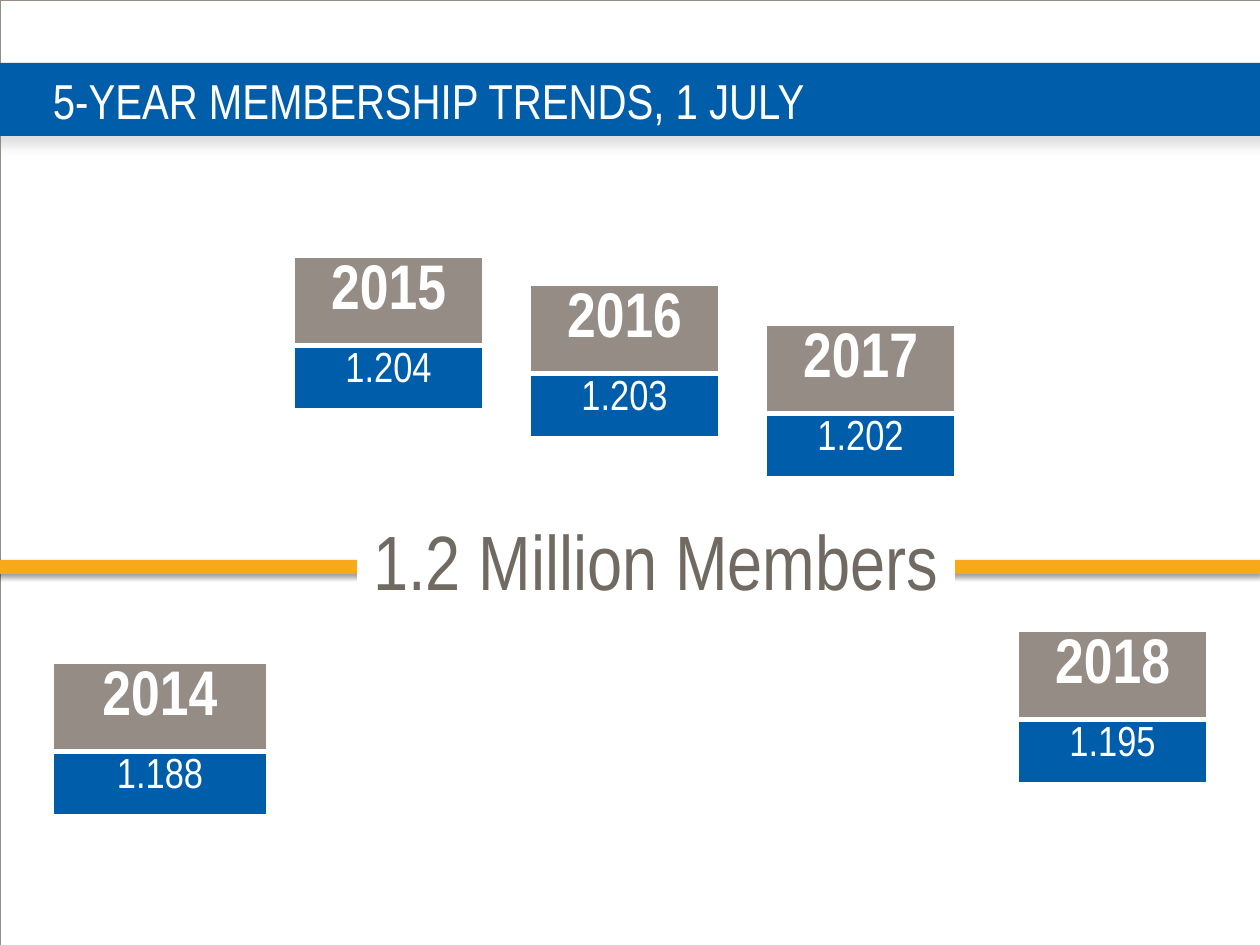
from lxml import etree
from pptx import Presentation
from pptx.dml.color import RGBColor
from pptx.enum.shapes import MSO_CONNECTOR, MSO_SHAPE
from pptx.enum.text import MSO_ANCHOR, PP_ALIGN
from pptx.oxml.ns import qn
from pptx.util import Emu, Pt

TITLE = "5-YEAR MEMBERSHIP TRENDS, 1 JULY"
HEADLINE = "1.2 Million Members"
YEARS = [
    ("2014", "1.188", 53, 663, 214),
    ("2015", "1.204", 294, 257, 189),
    ("2016", "1.203", 530, 285, 189),
    ("2017", "1.202", 766, 325, 189),
    ("2018", "1.195", 1018, 631, 189),
]
YEAR_HEIGHT, VALUE_HEIGHT = 87, 63

FONT = "Arial Narrow"
WHITE = RGBColor(0xFF, 0xFF, 0xFF)
BLUE = RGBColor(0x00, 0x5D, 0xAA)
GOLD = RGBColor(0xF7, 0xA8, 0x1B)
TAUPE = RGBColor(0x95, 0x8D, 0x85)
DARK_TAUPE = RGBColor(0x71, 0x6A, 0x62)
SHADOW_GRAY = RGBColor(0x80, 0x80, 0x80)
BLACK = RGBColor(0x00, 0x00, 0x00)
LEFT, CENTER = PP_ALIGN.LEFT, PP_ALIGN.CENTER
TOP, MIDDLE = MSO_ANCHOR.TOP, MSO_ANCHOR.MIDDLE
RECTANGLE = MSO_SHAPE.RECTANGLE
STRAIGHT = MSO_CONNECTOR.STRAIGHT
EMU_PER_PX = 914400 / 126


def px(*lengths):
    return [Emu(round(length * EMU_PER_PX)) for length in lengths]


def write_text(frame, text, size, color, bold=False, align=LEFT, anchor=TOP):
    frame.word_wrap = True
    frame.vertical_anchor = anchor
    paragraph = frame.paragraphs[0]
    paragraph.alignment = align
    run = paragraph.add_run()
    run.text = text
    run.font.name = FONT
    run.font.size = Pt(size)
    run.font.bold = bold
    run.font.color.rgb = color


def add_rectangle(slide, box, fill=None, line=None):
    shape = slide.shapes.add_shape(RECTANGLE, *px(*box))
    shape.shadow.inherit = False
    if fill is None:
        shape.fill.background()
    else:
        shape.fill.solid()
        shape.fill.fore_color.rgb = fill
    if line is None:
        shape.line.fill.background()
    else:
        shape.line.color.rgb = line
        shape.line.width = Pt(0.13)
    return shape


def add_shadow(shape, color, opacity, blur, distance):
    properties = shape._element.spPr
    effects = properties.find(qn("a:effectLst"))
    if effects is None:
        effects = etree.SubElement(properties, qn("a:effectLst"))
    shadow = etree.SubElement(
        effects, qn("a:outerShdw"), blurRad=str(Pt(blur)), dist=str(Pt(distance)),
        dir="5400000", algn="t", rotWithShape="0")
    shade = etree.SubElement(shadow, qn("a:srgbClr"), val=str(color))
    etree.SubElement(shade, qn("a:alpha"), val=str(opacity * 1000))


def set_borders(cell, bottom):
    properties = cell._tc.get_or_add_tcPr()
    sides = [("a:lnL", 1), ("a:lnR", 1), ("a:lnT", 1), ("a:lnB", bottom)]
    for index, (tag, width) in enumerate(sides):
        line = etree.Element(qn(tag), w=str(Pt(width)))
        fill = etree.SubElement(line, qn("a:solidFill"))
        etree.SubElement(fill, qn("a:srgbClr"), val=str(WHITE))
        properties.insert(index, line)


def add_year_table(slide, year, value, left, top, width):
    heights = px(YEAR_HEIGHT, VALUE_HEIGHT)
    box = px(left, top, width, YEAR_HEIGHT + VALUE_HEIGHT)
    table = slide.shapes.add_table(2, 1, *box).table
    rows = [(year, 36, True, TAUPE, 3), (value, 24, False, BLUE, 1)]
    for index, (text, size, bold, fill, bottom) in enumerate(rows):
        table.rows[index].height = heights[index]
        cell = table.cell(index, 0)
        cell.fill.solid()
        cell.fill.fore_color.rgb = fill
        set_borders(cell, bottom)
        write_text(cell.text_frame, text, size, WHITE, bold=bold, align=CENTER)


def main():
    presentation = Presentation()
    presentation.slide_width, presentation.slide_height = px(1260, 945)
    slide = presentation.slides.add_slide(presentation.slide_layouts[6])

    add_rectangle(slide, (0, 0, 1260, 945), line=TAUPE)
    banner = add_rectangle(slide, (-10, 63, 1281, 73), fill=BLUE)
    add_shadow(banner, SHADOW_GRAY, 25, 7, 4.8)

    title = slide.shapes.add_textbox(*px(53, 63, 1207, 73)).text_frame
    title.margin_left = title.margin_right = 0
    title.margin_top = title.margin_bottom = 0
    write_text(title, TITLE, 28, WHITE, anchor=MIDDLE)

    divider = slide.shapes.add_connector(STRAIGHT, *px(-63, 567, 1260, 567))
    divider.line.color.rgb = GOLD
    divider.line.width = Pt(7.5)
    add_shadow(divider, BLACK, 38, 3.1, 1.6)

    headline = add_rectangle(slide, (357, 507, 598, 106), fill=WHITE)
    write_text(headline.text_frame, HEADLINE, 44, DARK_TAUPE, align=CENTER)

    for entry in YEARS:
        add_year_table(slide, *entry)

    presentation.save("out.pptx")


if __name__ == "__main__":
    main()
